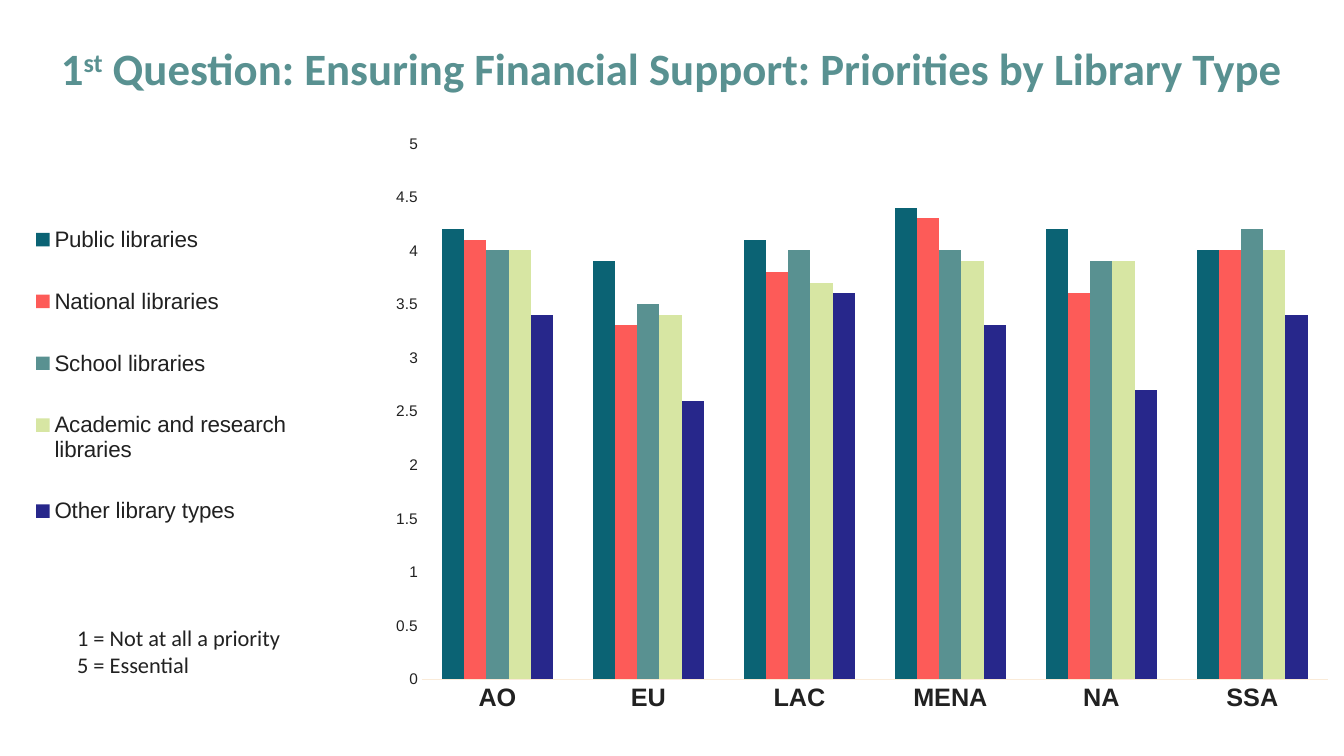
from dataclasses import dataclass

from lxml import etree
from pptx import Presentation
from pptx import util as u
from pptx.chart.data import CategoryChartData
from pptx.dml.color import RGBColor
from pptx.enum import chart as c
from pptx.enum import text as t
from pptx.oxml.ns import qn

WIDTH, HEIGHT = u.Inches(13.33), u.Inches(7.5)


@dataclass(frozen=True)
class Theme:
    ink: str = "212121"
    title: str = "599191"
    axis_line: str = "FAEBD9"
    text_font: str = "Calibri"
    chart_font: str = "Arial"
    title_size: int = 32
    note_size: int = 16
    chart_size: int = 10
    legend_size: int = 16
    category_size: int = 18
    value_size: int = 11


THEME = Theme()
REGIONS = ["AO", "EU", "LAC", "MENA", "NA", "SSA"]
LIBRARY_TYPES = [
    ("Public libraries", "0B6374", (4.2, 3.9, 4.1, 4.4, 4.2, 4)),
    ("National libraries", "FD5B58", (4.1, 3.3, 3.8, 4.3, 3.6, 4)),
    ("School libraries", "599191", (4, 3.5, 4, 4, 3.9, 4.2)),
    ("Academic and research libraries", "D7E6A3", (4, 3.4, 3.7, 3.9, 3.9, 4)),
    ("Other library types", "27278B", (3.4, 2.6, 3.6, 3.3, 2.7, 3.4)),
]


def set_attributes(target, **values):
    for name, value in values.items():
        setattr(target, name, value)


def style_font(font, size, name, color=THEME.ink, bold=False):
    set_attributes(font, size=u.Pt(size), name=name, bold=bold)
    font.color.rgb = RGBColor.from_string(color)


def share_box(left, top, width, height):
    """Turn shares of the slide's size into lengths."""
    return (int(WIDTH * left), int(HEIGHT * top),
            int(WIDTH * width), int(HEIGHT * height))


def add_text(slide, box, paragraphs, frame_format, font_format, align=t.PP_ALIGN.LEFT):
    """Add a text box; each paragraph is a list of (text, baseline percent)."""
    frame = slide.shapes.add_textbox(*share_box(*box)).text_frame
    set_attributes(frame, word_wrap=True, **frame_format)
    for index, parts in enumerate(paragraphs):
        paragraph = frame.add_paragraph() if index else frame.paragraphs[0]
        paragraph.alignment = align
        for words, baseline in parts:
            run = paragraph.add_run()
            run.text = words
            style_font(run.font, **font_format)
            if baseline:
                run._r.get_or_add_rPr().set("baseline", str(baseline * 1000))


def set_layout(parent, left, top, width, height, inner=False):
    """Place a chart part by shares of the chart's size."""
    layout = parent.find(qn("c:layout"))
    if layout is None:
        layout = etree.Element(qn("c:layout"))
        before = parent.find(qn("c:legendPos"))
        if before is None:
            parent.insert(0, layout)
        else:
            before.addnext(layout)
    manual = etree.SubElement(layout, qn("c:manualLayout"))
    values = [("layoutTarget", "inner")] if inner else []
    values += [("xMode", "edge"), ("yMode", "edge"),
               ("x", left), ("y", top), ("w", width), ("h", height)]
    for name, value in values:
        etree.SubElement(manual, qn(f"c:{name}")).set("val", str(value))


def style_axis(axis, size, bold=False):
    set_attributes(axis, has_major_gridlines=False,
                   major_tick_mark=c.XL_TICK_MARK.NONE,
                   minor_tick_mark=c.XL_TICK_MARK.NONE)
    style_font(axis.tick_labels.font, size, THEME.chart_font, bold=bold)


def add_priority_chart(slide, box):
    data = CategoryChartData()
    data.categories = REGIONS
    for name, _, values in LIBRARY_TYPES:
        data.add_series(name, values)
    chart = slide.shapes.add_chart(
        c.XL_CHART_TYPE.COLUMN_CLUSTERED, *share_box(*box), data).chart
    set_attributes(chart, has_title=False, has_legend=True)
    style_font(chart.font, THEME.chart_size, THEME.chart_font)

    plot = chart.plots[0]
    set_attributes(plot, gap_width=182, overlap=0, vary_by_categories=False)
    for series, (_, color, _) in zip(plot.series, LIBRARY_TYPES):
        series.format.fill.solid()
        series.format.fill.fore_color.rgb = RGBColor.from_string(color)

    style_axis(chart.category_axis, THEME.category_size, bold=True)
    line = chart.category_axis.format.line
    line.color.rgb = RGBColor.from_string(THEME.axis_line)
    line.width = u.Pt(0.75)
    style_axis(chart.value_axis, THEME.value_size)
    set_attributes(chart.value_axis, minimum_scale=0, maximum_scale=5, major_unit=0.5)
    chart.value_axis.format.line.fill.background()
    set_attributes(chart.value_axis.tick_labels,
                   number_format="General", number_format_is_linked=False)

    legend = chart.legend
    set_attributes(legend, position=c.XL_LEGEND_POSITION.LEFT, include_in_layout=False)
    style_font(legend.font, THEME.legend_size, THEME.chart_font)
    set_layout(legend._element, 0.02, 0.1, 0.2, 0.59)
    plot_area = chart._chartSpace.chart.plotArea
    set_layout(plot_area, 0.314, 0.026, 0.674, 0.852, inner=True)


def main():
    presentation = Presentation()
    set_attributes(presentation, slide_width=WIDTH, slide_height=HEIGHT)
    slide = presentation.slides.add_slide(presentation.slide_layouts[6])

    add_text(slide, (0.05, 0.819, 0.209, 0.085),
             [[("1 = Not at all a priority", 0)], [("5 = Essential", 0)]],
             {"auto_size": t.MSO_AUTO_SIZE.SHAPE_TO_FIT_TEXT},
             {"size": THEME.note_size, "name": THEME.text_font})
    add_priority_chart(slide, (0, 0.168, 1, 0.832))
    side, edge = u.Inches(0.13), u.Inches(0.07)
    add_text(slide, (0, 0.045, 1, 0.099),
             [[("1", 0), ("st", 30),
               (" Question: Ensuring Financial Support: Priorities by Library Type", 0)]],
             {"margin_left": side, "margin_right": side,
              "margin_top": edge, "margin_bottom": edge},
             {"size": THEME.title_size, "name": THEME.text_font,
              "color": THEME.title, "bold": True},
             t.PP_ALIGN.CENTER)
    presentation.save("out.pptx")


if __name__ == "__main__":
    main()
